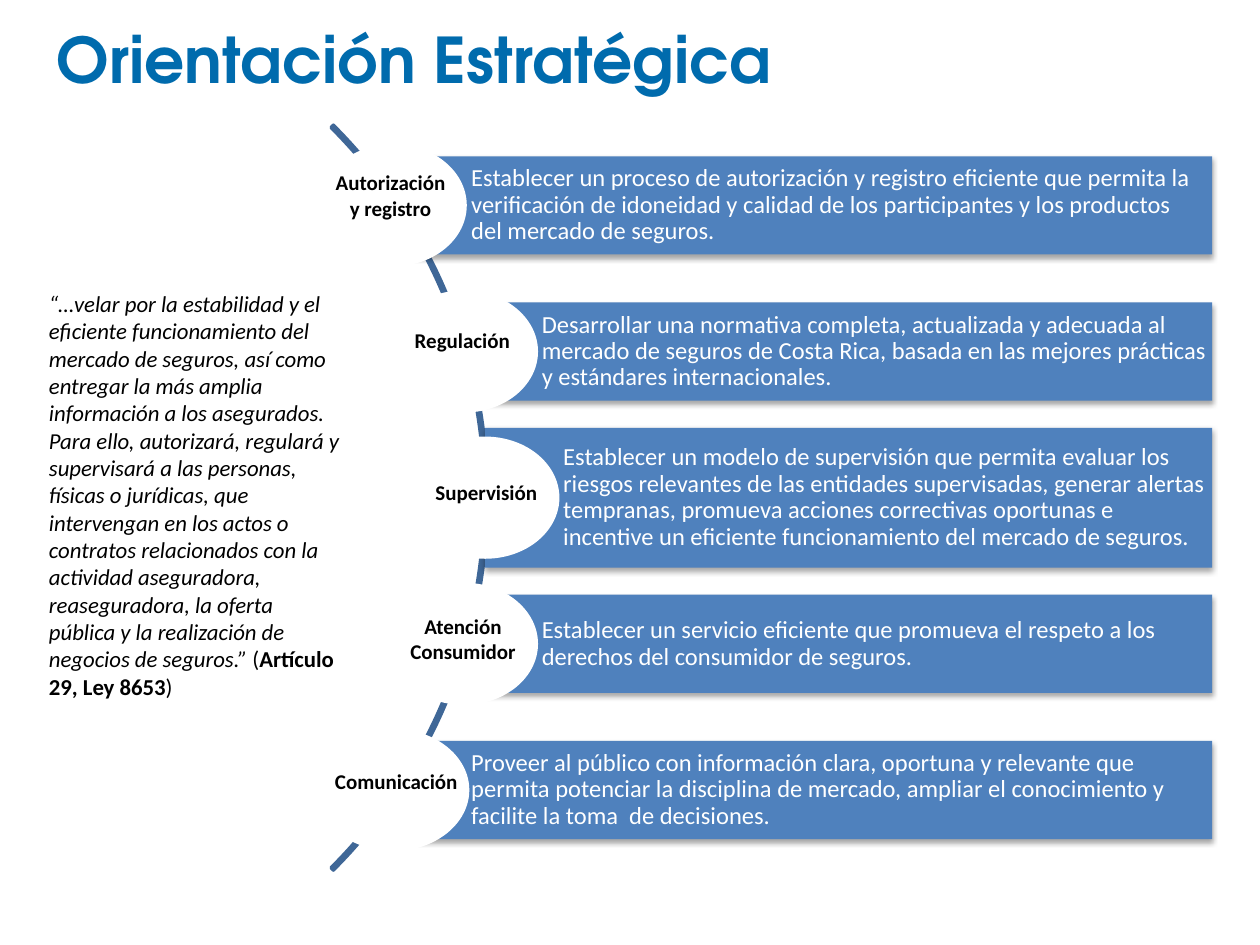
import dataclasses

import pptx
import pptx.dml.color
import pptx.enum.shapes
import pptx.enum.text
import pptx.oxml
import pptx.oxml.ns
import pptx.util

Inches = pptx.util.Inches
Pt = pptx.util.Pt
RGBColor = pptx.dml.color.RGBColor
Shape = pptx.enum.shapes.MSO_SHAPE
Align = pptx.enum.text.PP_ALIGN
Anchor = pptx.enum.text.MSO_ANCHOR

TITLE_BLUE = RGBColor(0x00, 0x6B, 0xAD)
BAR_BLUE = RGBColor(0x4F, 0x81, 0xBD)
ARC_BLUE = RGBColor(0x3F, 0x67, 0x97)
WHITE = RGBColor(0xFF, 0xFF, 0xFF)
BLACK = RGBColor(0x00, 0x00, 0x00)

BODY_FONT = "Calibri"
TITLE_FONT = "TeX Gyre Adventor"

FIRST_CENTER = 1.63
CENTER_STEP = 1.16
BAR_RIGHT = 9.62
CIRCLE_HEIGHT = 0.97

SHADOW_XML = (
    "<a:effectLst %s>"
    '<a:outerShdw blurRad="%d" dist="%d" dir="5400000" rotWithShape="0">'
    '<a:srgbClr val="000000"><a:alpha val="35000"/></a:srgbClr>'
    "</a:outerShdw></a:effectLst>"
    % (pptx.oxml.ns.nsdecls("a"), Pt(3.1), Pt(1.8))
)


@dataclasses.dataclass
class Goal:
    text: str
    bar_left: float
    bar_height: float
    circle_width: float
    label: tuple
    label_box: tuple
    label_wraps: bool = False


GOALS = [
    Goal("Establecer un proceso de autorización y registro eficiente que permita la "
         "verificación de idoneidad y calidad de los participantes y los productos "
         "del mercado de seguros.",
         3.12, 0.78, 1.17, ("Autorización y registro",), (2.53, 1.3, 1.14, 0.5), True),
    Goal("Desarrollar una normativa completa, actualizada y adecuada al mercado de "
         "seguros de Costa Rica, basada en las mejores prácticas y estándares "
         "internacionales.",
         3.68, 0.78, 1.18, ("Regulación",), (3.19, 2.55, 0.96, 0.3)),
    Goal("Establecer un modelo de supervisión que permita evaluar los riesgos "
         "relevantes de las entidades supervisadas, generar alertas tempranas, "
         "promueva acciones correctivas oportunas e incentive un eficiente "
         "funcionamiento del mercado de seguros.",
         3.85, 1.11, 1.18, ("Supervisión",), (3.35, 3.76, 1.02, 0.3)),
    Goal("Establecer un servicio eficiente que promueva el respeto a los derechos "
         "del consumidor de seguros.",
         3.68, 0.78, 1.18, ("Atención", "Consumidor"), (3.15, 4.82, 1.05, 0.5)),
    Goal("Proveer al público con información clara, oportuna y relevante que permita "
         "potenciar la disciplina de mercado, ampliar el conocimiento y facilite la "
         "toma  de decisiones.",
         3.12, 0.78, 1.21, ("Comunicación",), (2.55, 6.05, 1.19, 0.3)),
]

MISSION = (
    "“…velar por la estabilidad y el eficiente funcionamiento del mercado de seguros, "
    "así como entregar la más amplia información a los asegurados. Para ello, "
    "autorizará, regulará y supervisará a las personas, físicas o jurídicas, que "
    "intervengan en los actos o contratos relacionados con la actividad aseguradora, "
    "reaseguradora, la oferta pública y la realización de negocios de seguros.” "
)


def add_run(para, text, size, color, font=BODY_FONT, bold=False, italic=False):
    run = para.add_run()
    run.text = text
    run.font.name = font
    run.font.size = Pt(size)
    run.font.color.rgb = color
    run.font.bold = bold
    run.font.italic = italic


def add_text_box(slide, left, top, width, height, wraps=True):
    box = slide.shapes.add_textbox(
        Inches(left), Inches(top), Inches(width), Inches(height))
    box.text_frame.word_wrap = wraps
    return box.text_frame


def add_plain_shape(slide, kind, left, top, width, height, fill=None):
    shape = slide.shapes.add_shape(
        kind, Inches(left), Inches(top), Inches(width), Inches(height))
    shape.shadow.inherit = False
    shape.line.fill.background()
    if fill is None:
        shape.fill.background()
    else:
        shape.fill.solid()
        shape.fill.fore_color.rgb = fill
    return shape


def add_title(slide):
    frame = add_text_box(slide, 0.35, 0, 9, 0.92)
    frame.vertical_anchor = Anchor.MIDDLE
    add_run(frame.paragraphs[0], "Orientación Estratégica", 36, TITLE_BLUE,
            font=TITLE_FONT, bold=True)


def add_arc(slide):
    arc = add_plain_shape(slide, Shape.BLOCK_ARC, -4.49, -0.23, 8.36, 8.36)
    for index, value in enumerate((189, 27, 0.003)):
        arc.adjustments[index] = value
    arc.line.color.rgb = ARC_BLUE
    arc.line.width = Pt(2)


def add_bar(slide, goal, center):
    bar = add_plain_shape(
        slide, Shape.RECTANGLE, goal.bar_left, center - goal.bar_height / 2,
        BAR_RIGHT - goal.bar_left, goal.bar_height, BAR_BLUE)
    properties = bar.element.spPr
    properties.remove(properties.find(pptx.oxml.ns.qn("a:effectLst")))
    properties.append(pptx.oxml.parse_xml(SHADOW_XML))
    frame = bar.text_frame
    frame.word_wrap = True
    frame.vertical_anchor = Anchor.MIDDLE
    frame.margin_left = Inches(0.62)
    frame.margin_right = frame.margin_top = frame.margin_bottom = Inches(0.04)
    para = frame.paragraphs[0]
    para.alignment = Align.LEFT
    para.line_spacing = 0.9
    add_run(para, goal.text, 14, WHITE)


def add_circle(slide, goal, center):
    add_plain_shape(
        slide, Shape.OVAL, goal.bar_left - goal.circle_width / 2,
        center - CIRCLE_HEIGHT / 2, goal.circle_width, CIRCLE_HEIGHT, WHITE)


def add_label(slide, goal):
    frame = add_text_box(slide, *goal.label_box, wraps=goal.label_wraps)
    for index, line in enumerate(goal.label):
        para = frame.add_paragraph() if index else frame.paragraphs[0]
        para.alignment = Align.CENTER
        add_run(para, line, 12, BLACK, bold=True)


def add_mission(slide):
    para = add_text_box(slide, 0.29, 2.25, 2.52, 3.38).paragraphs[0]
    add_run(para, MISSION, 13, BLACK, italic=True)
    add_run(para, "(", 13, BLACK)
    add_run(para, "Artículo 29, Ley 8653", 13, BLACK, bold=True)
    add_run(para, ")", 13, BLACK)


def main():
    deck = pptx.Presentation()
    deck.slide_width = Inches(10)
    deck.slide_height = Inches(7.5)
    slide = deck.slides.add_slide(deck.slide_layouts[6])
    add_title(slide)
    add_arc(slide)
    for index, goal in enumerate(GOALS):
        center = FIRST_CENTER + index * CENTER_STEP
        add_bar(slide, goal, center)
        add_circle(slide, goal, center)
    add_mission(slide)
    for goal in GOALS:
        add_label(slide, goal)
    deck.save("out.pptx")


if __name__ == "__main__":
    main()
